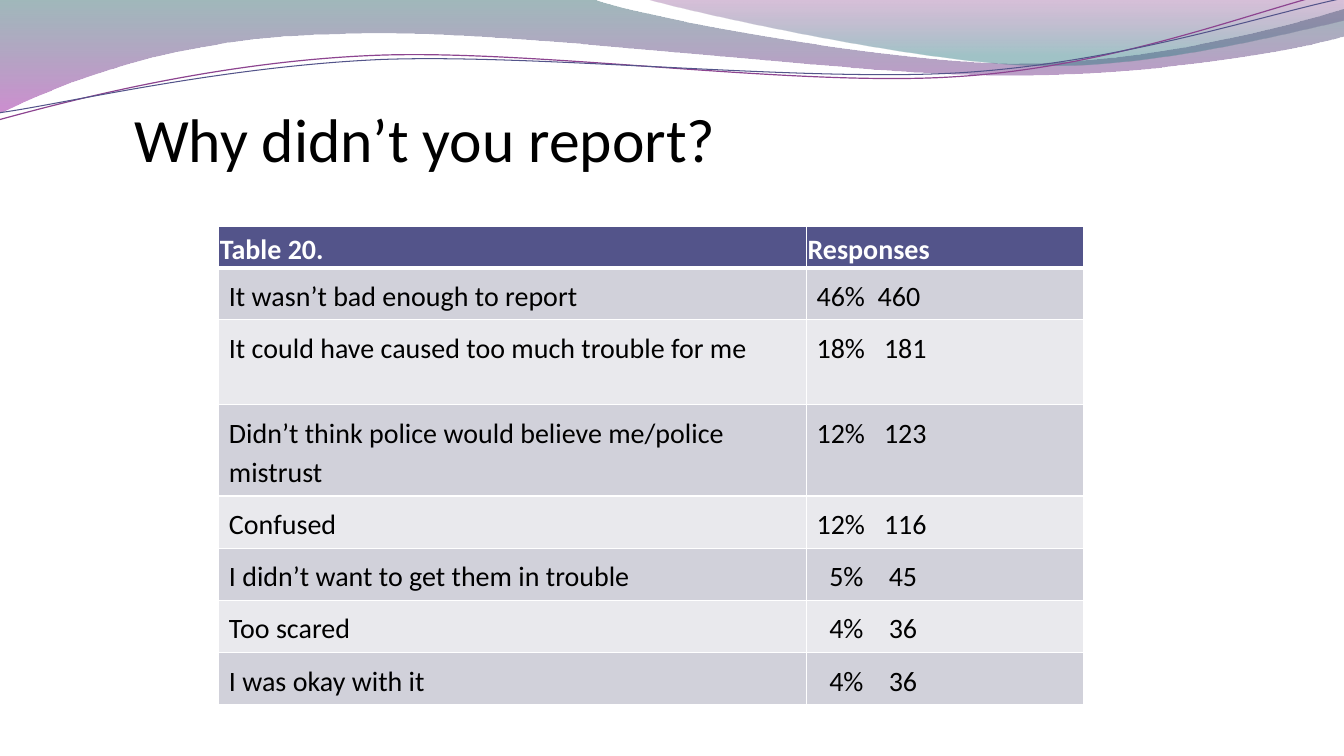
"""Build the survey slide on why people did not report."""
from lxml import etree
from pptx import Presentation
from pptx.dml.color import RGBColor
from pptx.enum.text import MSO_ANCHOR
from pptx.oxml.ns import qn
from pptx.util import Cm, Pt

BOTTOM, TOP = MSO_ANCHOR.BOTTOM, MSO_ANCHOR.TOP

TITLE = "Why didn’t you report?"
ROWS = [
    ("Table 20.", "Responses"),
    ("It wasn’t bad enough to report", "46%  460"),
    ("It could have caused too much trouble for me", "18%   181"),
    ("Didn’t think police would believe me/police mistrust", "12%   123"),
    ("Confused", "12%   116"),
    ("I didn’t want to get them in trouble", "  5%    45"),
    ("Too scared", "  4%    36"),
    ("I was okay with it", "  4%    36"),
]
THEME = {
    "font": "Calibri", "title_size": 44, "table_size": 20,
    "ink": "000000", "paper": "FFFFFF", "header": "53548A",
    "bands": ("D1D1DA", "E9E9ED"),
    "ribbon": ((0, "2D6368", 45), (1, "A530A9", 55)),
    "veil": ((0, "7F2F82", 30), (0.8, "2F7B82", 45)),
    "purple": "8D4490", "indigo": "53548A",
}
RIBBON = [
    (0, 0), (14.91, -0.03),
    (16.1, 0.43, 22.48, 1.6, 25.68, 1.6), (28.88, 1.6, 32.46, 0.66, 33.86, 0.23),
    (33.91, 0.91),
    (33.3, 1.12, 29.46, 1.93, 25.25, 1.9), (21.06, 1.9, 12.93, 0.71, 8.71, 0.86),
    (4.34, 0.91, 1.55, 2.11, -0.03, 2.87),
]
VEIL = [
    (16.23, -0.03), (17.25, 0.28, 23.09, 1.57, 26.04, 1.65),
    (28.98, 1.75, 32.56, 0.81, 33.86, 0.53), (33.86, 0),
]
PURPLE_WAVE = [
    (-0.03, 3.02), (1.63, 2.57, 5.36, 1.57, 9.37, 1.4),
    (13.39, 1.22, 20.07, 2.21, 24.13, 1.93), (28.19, 1.68, 31.8, 0.2, 33.81, -0.25),
]
INDIGO_WAVE = [
    (0, 2.84), (1.6, 2.62, 5.54, 1.68, 9.6, 1.5),
    (13.64, 1.35, 20.22, 2.08, 24.26, 1.83), (28.32, 1.57, 31.88, 0.36, 33.88, -0.05),
]
TITLE_BOX = (3.38, 1.43, 27.3, 2.97)
TABLE_ORIGIN = (5.51, 5.71)
COLUMN_WIDTHS = (14.81, 6.99)
ROW_HEIGHTS = (1.03, 1.31, 2.14, 2.3) + (1.31,) * 4
HEADER_MARGINS = (0.03, 0.03, 0.03, 0.03)
BODY_MARGINS = (0.26, 0.17, 0.53, 0.17)


def apply(target, **formats):
    for name, value in formats.items():
        setattr(target, name, value)


def set_margins(target, margins):
    sides = ("left", "top", "right", "bottom")
    apply(target, **{f"margin_{side}": Cm(size) for side, size in zip(sides, margins)})


def write(para, text, size, color, bold=False):
    span = para.add_run()
    span.text = text
    apply(span.font, name=THEME["font"], size=Pt(size), bold=bold)
    span.font.color.rgb = RGBColor.from_string(color)


def add_outline(page, outline, close):
    points = [
        (Cm(x), Cm(y)) for segment in outline for x, y in zip(segment[::2], segment[1::2])
    ]
    builder = page.shapes.build_freeform(*points[0])
    builder.add_line_segments(points[1:], close=False)
    shape = builder.convert_to_shape()
    shape.shadow.inherit = False
    steps = iter(list(shape.element.spPr.iter(qn("a:lnTo"))))
    for segment in outline[1:]:
        first = next(steps)
        if len(segment) == 6:
            first.tag = qn("a:cubicBezTo")
            for _ in range(2):
                extra = next(steps)
                first.append(extra[0])
                extra.getparent().remove(extra)
    if close:
        etree.SubElement(first.getparent(), qn("a:close"))
    return shape


def add_wash(page, outline, stops):
    shape = add_outline(page, outline, True)
    shape.line.fill.background()
    shape.fill.gradient()
    shape.fill.gradient_angle = 270
    for stop, (position, color, _) in zip(shape.fill.gradient_stops, stops):
        stop.position = position
        stop.color.rgb = RGBColor.from_string(color)
    colors = shape.element.spPr.iter(qn("a:srgbClr"))
    for color, (_, _, opacity) in zip(list(colors), stops):
        etree.SubElement(color, qn("a:alpha"), val=str(opacity * 1000))


def add_wave(page, outline, color, width):
    shape = add_outline(page, outline, False)
    shape.fill.background()
    shape.line.color.rgb = RGBColor.from_string(color)
    shape.line.width = Pt(width)


def add_title(page):
    box = page.shapes.add_textbox(*map(Cm, TITLE_BOX))
    apply(box.text_frame, word_wrap=True, vertical_anchor=BOTTOM)
    set_margins(box.text_frame, (0, 0.13, 0, 0))
    write(box.text_frame.paragraphs[0], TITLE, THEME["title_size"], THEME["ink"])


def style_cell(cell, row):
    widths = {"L": 1, "R": 1, "T": 3 if row == 1 else 1, "B": 3 if row == 0 else 1}
    properties = cell._tc.get_or_add_tcPr()
    for side, width in widths.items():
        line = etree.SubElement(properties, qn(f"a:ln{side}"), w=str(Pt(width)))
        fill = etree.SubElement(line, qn("a:solidFill"))
        etree.SubElement(fill, qn("a:srgbClr"), val=THEME["paper"])
    cell.fill.solid()
    color = THEME["bands"][(row - 1) % 2] if row else THEME["header"]
    cell.fill.fore_color.rgb = RGBColor.from_string(color)
    cell.vertical_anchor = TOP
    set_margins(cell, BODY_MARGINS if row else HEADER_MARGINS)


def add_answers(page):
    size = (sum(COLUMN_WIDTHS), sum(ROW_HEIGHTS))
    frame = page.shapes.add_table(
        len(ROWS), len(COLUMN_WIDTHS), *map(Cm, TABLE_ORIGIN + size)
    )
    table = frame.table
    table.horz_banding = False
    for column, width in zip(table.columns, COLUMN_WIDTHS):
        column.width = Cm(width)
    for row, (texts, height) in enumerate(zip(ROWS, ROW_HEIGHTS)):
        table.rows[row].height = Cm(height)
        for column, text in enumerate(texts):
            cell = table.cell(row, column)
            style_cell(cell, row)
            para = cell.text_frame.paragraphs[0]
            para.line_spacing = 1.15
            color = THEME["ink"] if row else THEME["paper"]
            write(para, text, THEME["table_size"], color, row == 0)


def main():
    deck = Presentation()
    apply(deck, slide_width=Cm(33.87), slide_height=Cm(19.05))
    page = deck.slides.add_slide(deck.slide_layouts[6])
    add_wash(page, RIBBON, THEME["ribbon"])
    add_wash(page, VEIL, THEME["veil"])
    add_wave(page, PURPLE_WAVE, THEME["purple"], 0.85)
    add_wave(page, INDIGO_WAVE, THEME["indigo"], 0.75)
    add_title(page)
    add_answers(page)
    deck.save("out.pptx")


if __name__ == "__main__":
    main()
